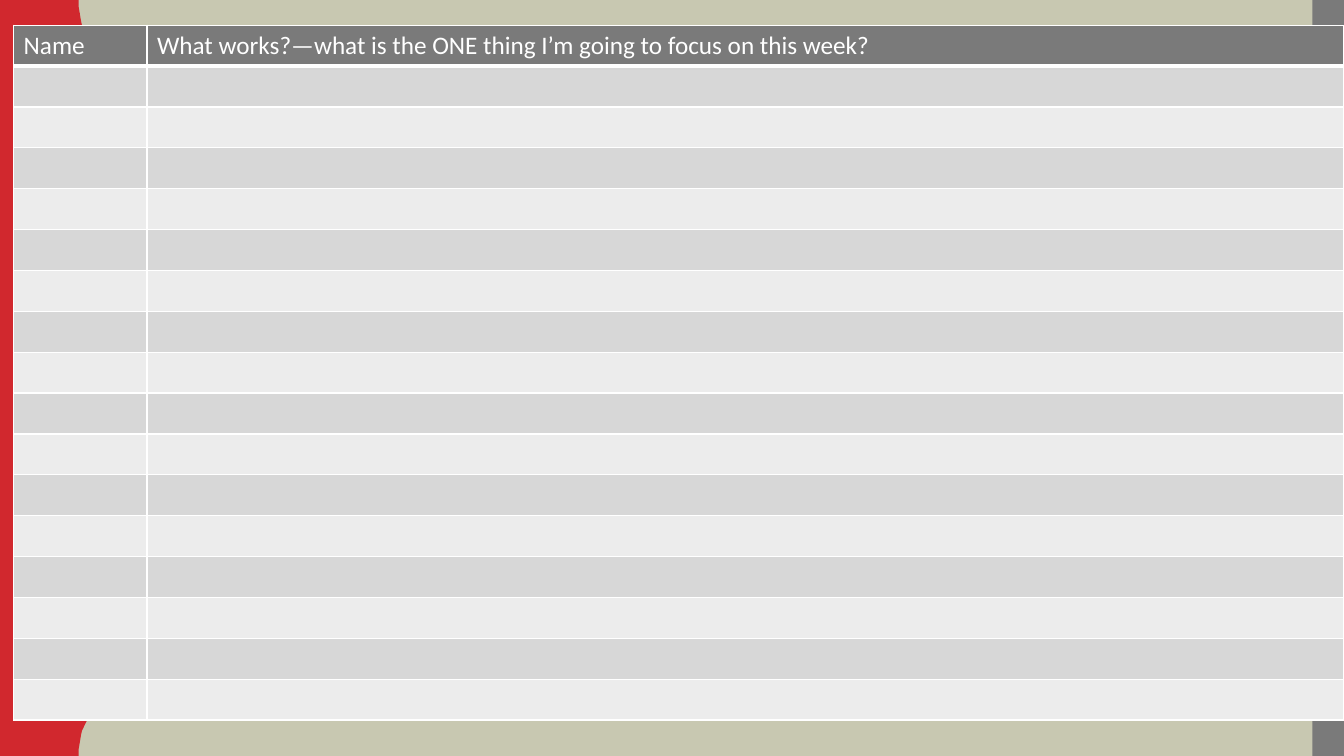
from typing import NamedTuple

from lxml import etree
from pptx import Presentation
from pptx import util as u
from pptx.dml.color import RGBColor
from pptx.enum import shapes
from pptx.oxml.ns import qn

PX = 9525  # EMU per px, slide of 1280 x 720 px
WIDTH, HEIGHT = 1280, 720

SAND = RGBColor(0xC8, 0xC8, 0xB1)
RED = RGBColor(0xD1, 0x28, 0x2E)
GRAY = RGBColor(0x7A, 0x7A, 0x7A)
BAND_DARK = RGBColor(0xD7, 0xD7, 0xD7)
BAND_LIGHT = RGBColor(0xEC, 0xEC, 0xEC)
WHITE = RGBColor(0xFF, 0xFF, 0xFF)

# Right edge of the red band: half a wave, mirrored and repeated
WAVE = 144
HALF_WAVE = [(75, 0), (75, 7), (76, 13), (77, 19), (78, 24), (80, 28), (82, 32),
             (84, 36), (85, 40), (87, 44), (89, 48), (91, 53), (92, 59), (93, 65), (93, 72)]


class Column(NamedTuple):
    heading: str
    width: int


COLUMNS = [
    Column("Name", 127),
    Column("What works?—what is the ONE thing I’m going to focus on this week?", 1140),
]
TABLE_LEFT, TABLE_TOP = 13, 24
ROWS, ROW_HEIGHT = 17, 38
HEADING_FONT = {"name": "Calibri", "size": u.Pt(18), "bold": False}


def paint(sp, color: RGBColor) -> None:
    sp.shadow.inherit = False
    sp.fill.solid()
    sp.fill.fore_color.rgb = color
    sp.line.fill.background()


def add_wavy_band(s) -> None:
    wave = HALF_WAVE + [(x, WAVE - y) for x, y in HALF_WAVE[-2::-1]]
    edge = [(x, y + top) for top in range(0, HEIGHT, WAVE) for x, y in wave]
    fb = s.shapes.build_freeform(0, 0, scale=PX)
    fb.add_line_segments(edge + [(0, HEIGHT)], close=True)
    paint(fb.convert_to_shape(), RED)


def set_borders(cell, bottom: int) -> None:
    tcPr = cell._tc.get_or_add_tcPr()
    for i, (side, points) in enumerate([("L", 1), ("R", 1), ("T", 1), ("B", bottom)]):
        ln = etree.Element(qn(f"a:ln{side}"), w=str(u.Pt(points)))
        fill = etree.SubElement(ln, qn("a:solidFill"))
        etree.SubElement(fill, qn("a:srgbClr"), val=str(WHITE))
        tcPr.insert(i, ln)


def add_focus_table(s) -> None:
    width = sum(c.width for c in COLUMNS)
    table = s.shapes.add_table(ROWS, len(COLUMNS), TABLE_LEFT * PX, TABLE_TOP * PX,
                               width * PX, ROWS * ROW_HEIGHT * PX).table
    for column, col in zip(COLUMNS, table.columns):
        col.width = column.width * PX

    # Banded fills and white grid
    for i, row in enumerate(table.rows):
        row.height = ROW_HEIGHT * PX
        for cell in row.cells:
            cell.fill.solid()
            cell.fill.fore_color.rgb = GRAY if i == 0 else BAND_DARK if i % 2 else BAND_LIGHT
            set_borders(cell, bottom=1 if i else 3)

    # Headings
    for column, cell in zip(COLUMNS, table.rows[0].cells):
        r = cell.text_frame.paragraphs[0].add_run()
        r.text = column.heading
        for name, value in HEADING_FONT.items():
            setattr(r.font, name, value)
        r.font.color.rgb = WHITE


def main() -> None:
    prs = Presentation()
    prs.slide_width, prs.slide_height = WIDTH * PX, HEIGHT * PX
    s = prs.slides.add_slide(prs.slide_layouts[6])

    # Background with side bands
    s.background.fill.solid()
    s.background.fill.fore_color.rgb = SAND
    add_wavy_band(s)
    bar = s.shapes.add_shape(shapes.MSO_SHAPE.RECTANGLE, 1250 * PX, 0, 30 * PX, HEIGHT * PX)
    paint(bar, GRAY)

    add_focus_table(s)
    prs.save("out.pptx")


if __name__ == "__main__":
    main()
